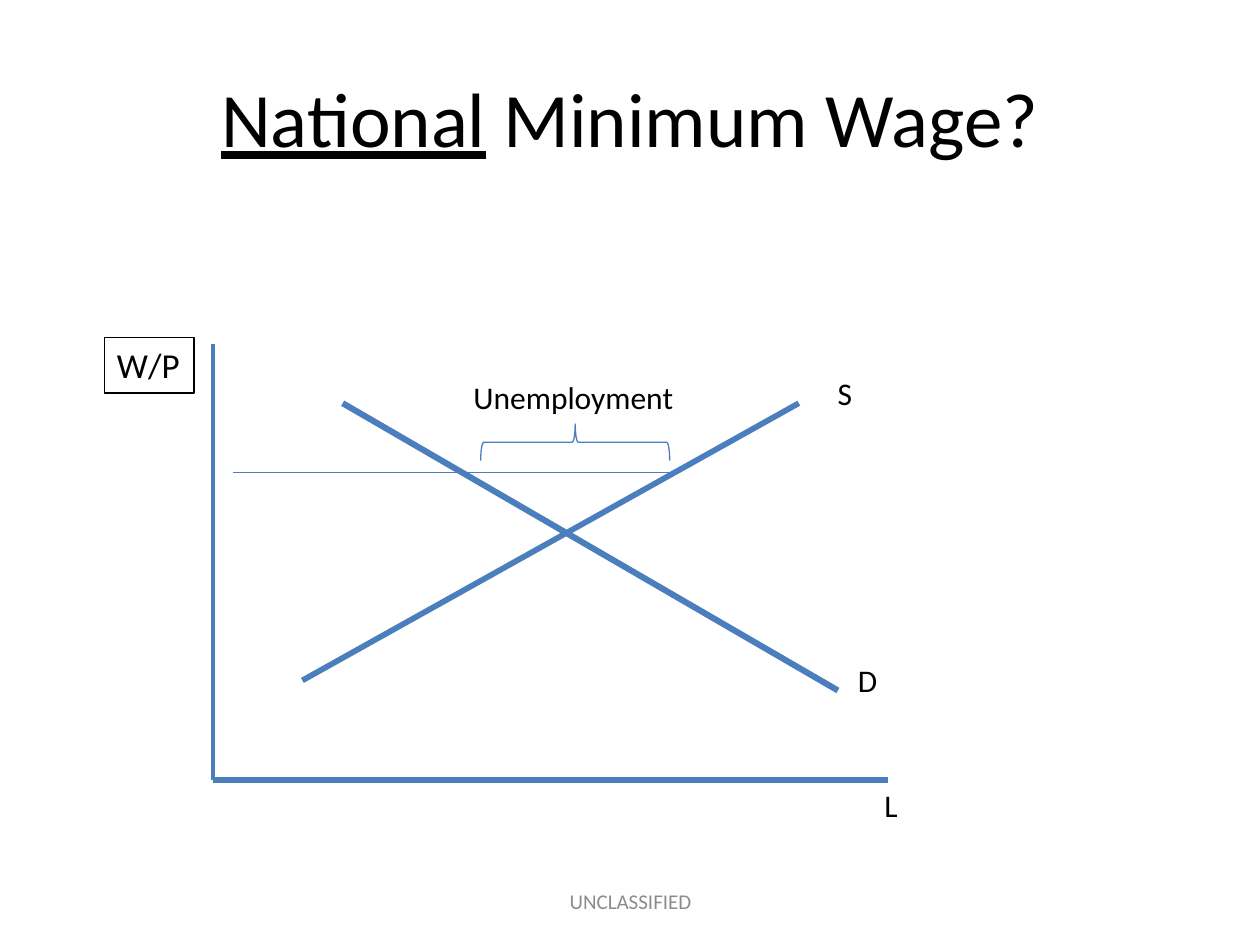
import pptx
import pptx.util
import pptx.dml.color
import pptx.enum.shapes
import pptx.enum.text
import lxml.etree

COLS, ROWS = 100, 75
WIDE, HIGH = pptx.util.Inches(10), pptx.util.Inches(7.5)
BLUE, BLACK, GREY = "4B7EBC", "000000", "8C8C8C"
ALIGN = pptx.enum.text.PP_ALIGN
ANCHOR = pptx.enum.text.MSO_ANCHOR
FIT = pptx.enum.text.MSO_AUTO_SIZE
NS = "{http://schemas.openxmlformats.org/drawingml/2006/main}"

AXES = [
    ((16.9, 27.3), (16.9, 61.9), 2.5),
    ((16.9, 61.9), (70.5, 61.9), 3.5),
]
CURVES = [
    ((24, 54), (63.4, 32), 3.25),
    ((27.2, 32), (66.5, 54.8), 3.5),
]
WAGE = ((18.5, 37.5), (53.9, 37.5), 1)
LABELS = [
    ("Unemployment", (36.6, 29.5, 18, 4)),
    ("S", (65.5, 29.2, 3.2, 4)),
    ("D", (67.1, 52, 3.6, 4)),
    ("L", (69.2, 61.9, 3.1, 4)),
]


def grid(*cells):
    units = (WIDE / COLS, HIGH / ROWS)
    return [round(cell * units[i % 2]) for i, cell in enumerate(cells)]


def paint(code):
    return pptx.dml.color.RGBColor.from_string(code)


def style(item, looks):
    for name, value in looks.items():
        setattr(item, name, value)


def write(run, text, size, color=BLACK, under=False):
    run.text = text
    style(run.font, {"name": "Calibri", "size": pptx.util.Pt(size),
                     "underline": under})
    run.font.color.rgb = paint(color)


def edge(shape, color, width):
    shape.line.color.rgb = paint(color)
    shape.line.width = pptx.util.Pt(width)


def title(slide):
    shape = slide.shapes.title
    box = grid(5, 3, 90, 12.5)
    style(shape, dict(zip(("left", "top", "width", "height"), box)))
    shape.text_frame.vertical_anchor = ANCHOR.MIDDLE
    para = shape.text_frame.paragraphs[0]
    para.alignment = ALIGN.CENTER
    write(para.add_run(), "National", 44, under=True)
    write(para.add_run(), " Minimum Wage?", 44)


def label(slide, text, box, size=18, color=BLACK, frame=None, para=None):
    shape = slide.shapes.add_textbox(*grid(*box))
    looks = {"word_wrap": False, "auto_size": FIT.SHAPE_TO_FIT_TEXT}
    style(shape.text_frame, looks | (frame or {}))
    first = shape.text_frame.paragraphs[0]
    style(first, para or {})
    write(first.add_run(), text, size, color)
    return shape


def line(slide, start, end, width):
    kind = pptx.enum.shapes.MSO_CONNECTOR.STRAIGHT
    shape = slide.shapes.add_connector(kind, *grid(*start, *end))
    edge(shape, BLUE, width)
    lxml.etree.SubElement(shape._element.spPr, NS + "effectLst")


def brace(slide, box):
    kind = pptx.enum.shapes.MSO_SHAPE.LEFT_BRACE
    shape = slide.shapes.add_shape(kind, *grid(*box))
    shape.rotation = 90
    shape.shadow.inherit = False
    shape.fill.background()
    edge(shape, BLUE, 0.75)


def main():
    deck = pptx.Presentation()
    style(deck, {"slide_width": WIDE, "slide_height": HIGH})
    slide = deck.slides.add_slide(deck.slide_layouts[5])
    title(slide)
    label(slide, "UNCLASSIFIED", (34.2, 69.5, 31.7, 4), 12, GREY,
          {"word_wrap": True, "auto_size": FIT.NONE,
           "vertical_anchor": ANCHOR.MIDDLE}, {"alignment": ALIGN.CENTER})
    for start, end, width in AXES + CURVES + [WAGE]:
        line(slide, start, end, width)
    brace(slide, (44.2, 27.6, 2.9, 15))
    edge(label(slide, "W/P", (8.3, 26.8, 7.1, 4.4), 20), BLACK, 1)
    for text, box in LABELS:
        label(slide, text, box)
    deck.save("out.pptx")


if __name__ == "__main__":
    main()
